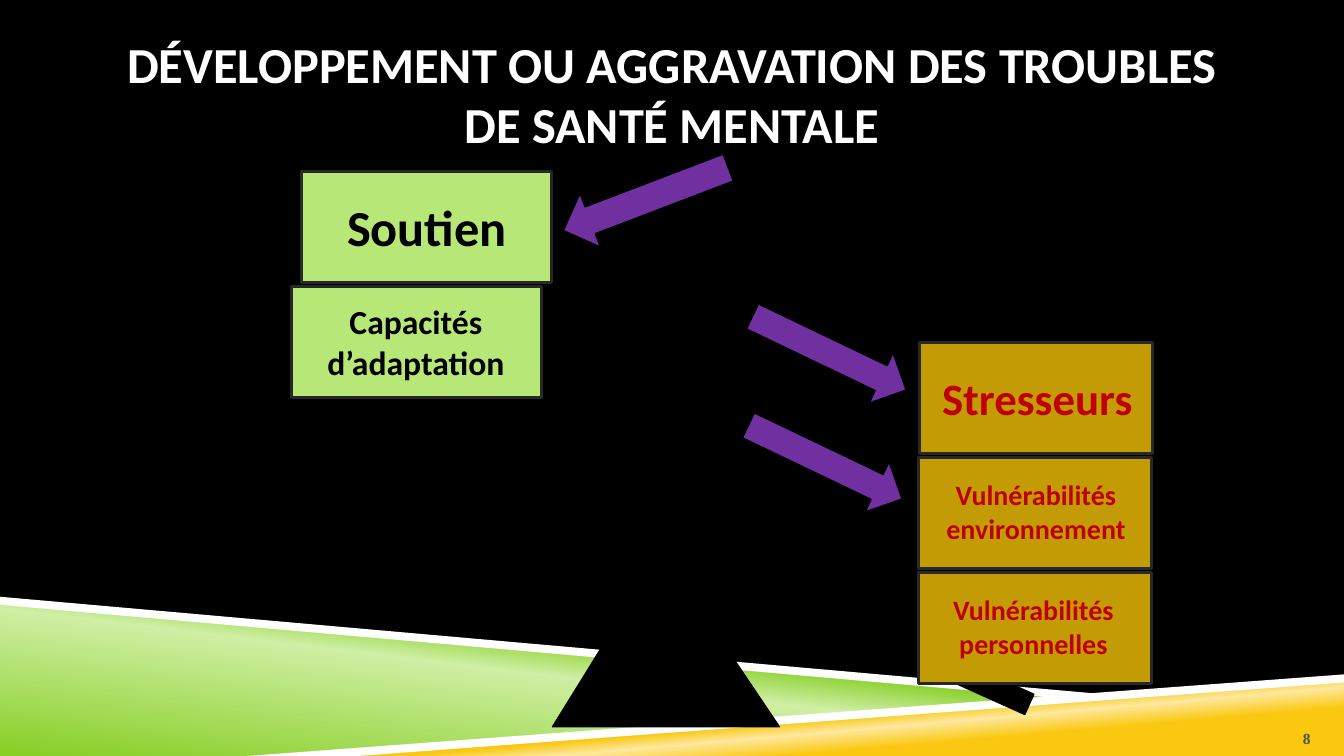
from dataclasses import dataclass

from lxml import etree
from pptx import Presentation
from pptx.dml.color import RGBColor
from pptx.enum.shapes import MSO_SHAPE as Preset
from pptx.enum.text import MSO_ANCHOR as Anchor, MSO_AUTO_SIZE as AutoSize, PP_ALIGN as Align
from pptx.oxml.ns import qn
from pptx.shapes.autoshape import Shape
from pptx.slide import Slide
from pptx.text.text import TextFrame
from pptx.util import Inches, Pt


@dataclass(frozen=True)
class Theme:
    font: str = "Calibri"
    number_font: str = "Times New Roman"
    black: str = "000000"
    white: str = "FFFFFF"
    grey: str = "4D4D4D"
    border: str = "282828"
    support: str = "B7E776"
    stress: str = "C39B04"
    stress_text: str = "C00000"
    arrow: str = "7030A0"
    green: str = "86CE24"
    pale_green: str = "CFEFA4"
    yellow: str = "FAC810"
    pale_yellow: str = "FDE99F"
    title_size: int = 36
    number_size: int = 11


THEME = Theme()
Box = tuple[float, float, float, float]


@dataclass(frozen=True)
class Gradient:
    angle: int
    stops: tuple[tuple[int, str], ...]


@dataclass(frozen=True)
class Band:
    points: tuple[tuple[float, float], ...]
    fill: str | Gradient


@dataclass(frozen=True)
class Card:
    box: Box
    text_box: Box
    text: str
    size: int
    fill: str
    color: str


@dataclass(frozen=True)
class Figure:
    preset: Preset
    box: Box
    fill: str
    rotation: float = 0


BANDS = (
    Band(((0, 5.97), (10.56, 6.92), (2.67, 7.5), (0, 7.5)),
         Gradient(277, ((0, THEME.green), (52, THEME.pale_green), (66, THEME.green)))),
    Band(((2.64, 7.5), (13.33, 6.72), (13.33, 7.5)),
         Gradient(265, ((28, THEME.yellow), (40, THEME.pale_yellow), (48, THEME.yellow)))),
    Band(((0, 5.92), (0, 6), (10.54, 6.93), (11.09, 6.9)), THEME.white),
    Band(((13.33, 6.69), (2.45, 7.5), (3.55, 7.5), (13.33, 6.77)), THEME.white),
)

BEAM = Figure(Preset.RECTANGLE, (2.57, 5.24, 7.99, 0.22), THEME.black, 24.2)
PIVOT = Figure(Preset.ISOSCELES_TRIANGLE, (5.48, 5.47, 2.25, 1.74), THEME.black)
ARROWS = (
    Figure(Preset.RIGHT_ARROW, (7.34, 4.31, 1.69, 0.55), THEME.arrow, 25.6),
    Figure(Preset.RIGHT_ARROW, (5.53, 1.69, 1.75, 0.57), THEME.arrow, 159.1),
    Figure(Preset.RIGHT_ARROW, (7.38, 3.23, 1.69, 0.55), THEME.arrow, 25.6),
)

STRESS = (THEME.stress, THEME.stress_text)
SUPPORT = (THEME.support, THEME.black)
CARDS = (
    Card((9.11, 5.68, 2.31, 1.1), (9.21, 5.83, 2.08, 0.77),
         "Vulnérabilités personnelles", 20, *STRESS),
    Card((9.11, 4.54, 2.31, 1.1), (9.12, 4.69, 2.31, 0.77),
         "Vulnérabilités environnement", 20, *STRESS),
    Card((9.12, 3.4, 2.31, 1.1), (9.07, 3.63, 2.44, 0.64), "Stresseurs", 32, *STRESS),
    Card((2.89, 2.84, 2.48, 1.1), (2.97, 2.94, 2.31, 0.91),
         "Capacités d’adaptation", 24, *SUPPORT),
    Card((2.99, 1.7, 2.48, 1.1), (3.08, 1.9, 2.31, 0.71), "Soutien", 36, *SUPPORT),
)


def rgb(color: str) -> RGBColor:
    return RGBColor.from_string(color)


def inches(box: Box) -> list[Inches]:
    return [Inches(length) for length in box]


def write(frame: TextFrame, text: str, size: int, color: str,
          align: Align = Align.CENTER, font_name: str = THEME.font) -> None:
    frame.word_wrap = True
    frame.text = text
    paragraph = frame.paragraphs[0]
    paragraph.alignment = align
    font = paragraph.font
    font.name, font.size, font.bold = font_name, Pt(size), True
    font.color.rgb = rgb(color)


def apply_gradient(shape: Shape, gradient: Gradient) -> None:
    """Replace the two default stops, which the public methods cannot add to."""
    shape.fill.gradient()
    fill = shape.fill._xPr.find(qn("a:gradFill"))
    stops = fill.find(qn("a:gsLst"))
    for stop in list(stops):
        stops.remove(stop)
    for position, color in gradient.stops:
        stop = etree.SubElement(stops, qn("a:gs"), pos=str(position * 1000))
        etree.SubElement(stop, qn("a:srgbClr"), val=color)
    fill.find(qn("a:lin")).set("ang", str(gradient.angle * 60000))


def add_band(slide: Slide, band: Band) -> None:
    start, *others = [(Inches(x), Inches(y)) for x, y in band.points]
    builder = slide.shapes.build_freeform(*start)
    builder.add_line_segments(others, close=True)
    shape = builder.convert_to_shape()
    shape.shadow.inherit = False
    shape.line.fill.background()
    if isinstance(band.fill, Gradient):
        apply_gradient(shape, band.fill)
    else:
        shape.fill.solid()
        shape.fill.fore_color.rgb = rgb(band.fill)


def add_figure(slide: Slide, figure: Figure, border: str = THEME.black,
               width: float = 1) -> Shape:
    shape = slide.shapes.add_shape(figure.preset, *inches(figure.box))
    shape.shadow.inherit = False
    shape.rotation = figure.rotation
    shape.fill.solid()
    shape.fill.fore_color.rgb = rgb(figure.fill)
    shape.line.color.rgb = rgb(border)
    shape.line.width = Pt(width)
    return shape


def add_card(slide: Slide, card: Card) -> None:
    add_figure(slide, Figure(Preset.RECTANGLE, card.box, card.fill), THEME.border, 2.25)
    frame = slide.shapes.add_textbox(*inches(card.text_box)).text_frame
    write(frame, card.text, card.size, card.color)
    frame.auto_size = AutoSize.SHAPE_TO_FIT_TEXT


def add_title(slide: Slide, text: str) -> None:
    title = slide.shapes.title
    title.left, title.top, title.width, title.height = inches((1, 0.3, 11.33, 1.25))
    frame = title.text_frame
    frame.margin_left = frame.margin_right = 0
    frame.vertical_anchor = Anchor.MIDDLE
    write(frame, text, THEME.title_size, THEME.white)


def add_slide_number(slide: Slide, number: str) -> None:
    frame = slide.shapes.add_textbox(*inches((12.33, 7.02, 0.67, 0.4))).text_frame
    frame.margin_left = frame.margin_right = frame.margin_bottom = 0
    frame.vertical_anchor = Anchor.BOTTOM
    write(frame, number, THEME.number_size, THEME.grey, Align.RIGHT, THEME.number_font)


def main() -> None:
    presentation = Presentation()
    presentation.slide_width, presentation.slide_height = Inches(13.33), Inches(7.5)
    slide = presentation.slides.add_slide(presentation.slide_layouts[5])
    slide.background.fill.solid()
    slide.background.fill.fore_color.rgb = rgb(THEME.black)
    for band in BANDS:
        add_band(slide, band)
    add_figure(slide, BEAM)
    add_title(slide, "DÉVELOPPEMENT OU AGGRAVATION DES TROUBLES DE SANTÉ MENTALE")
    add_slide_number(slide, "8")
    for card in CARDS:
        add_card(slide, card)
    for arrow in ARROWS:
        add_figure(slide, arrow)
    add_figure(slide, PIVOT).adjustments[0] = 0.479
    presentation.save("out.pptx")


if __name__ == "__main__":
    main()
